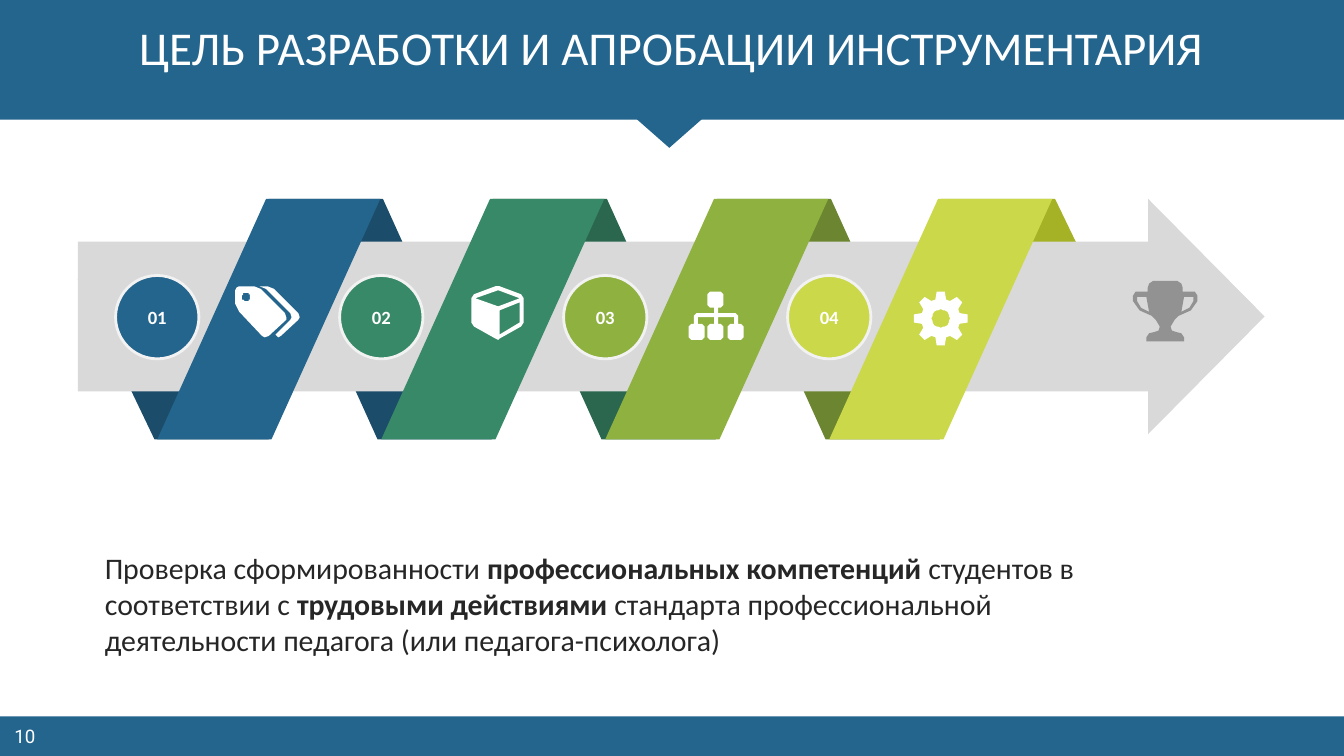
import dataclasses
import math

import pptx
import pptx.dml.color
import pptx.enum.shapes
import pptx.enum.text
import pptx.util

Inches = pptx.util.Inches
Kind = pptx.enum.shapes.MSO_SHAPE
Align = pptx.enum.text.PP_ALIGN
Anchor = pptx.enum.text.MSO_ANCHOR


@dataclasses.dataclass(frozen=True)
class Theme:
    """Holds the colours, fonts and type sizes."""
    blue: str = "24658D"
    white: str = "FFFFFF"
    ink: str = "262626"
    arrow: str = "D9D9D9"
    ring: str = "F2F2F2"
    prize: str = "929292"
    bands: tuple = ("24658D", "388968", "8FB140", "CAD849")
    folds: tuple = ("1B4C6A", "1B4C6A", "2A674E", "6B8530", "A5B226")
    font: str = "Calibri"
    digit: str = "Roboto"
    head: float = 25.2
    body: float = 16
    small: float = 10


theme = Theme()


def paint(shape, fill, line=None):
    """Gives a shape a flat fill and an optional outline."""
    shape.shadow.inherit = False
    shape.fill.solid()
    shape.fill.fore_color.rgb = pptx.dml.color.RGBColor.from_string(fill)
    if line:
        shape.line.color.rgb = pptx.dml.color.RGBColor.from_string(line)
        shape.line.width = pptx.util.Pt(1.5)
    else:
        shape.line.fill.background()
    return shape


def block(slide, kind, box, fill, line=None):
    """Adds a preset shape in a box given in inches."""
    return paint(slide.shapes.add_shape(kind, *map(Inches, box)), fill, line)


def trace(slide, left, top, loops, fill):
    """Draws closed loops, in hundredths of an inch from a corner."""
    pen = slide.shapes.build_freeform(*loops[0][0], scale=Inches(0.01))
    pen.add_line_segments(loops[0][1:], close=True)
    for loop in loops[1:]:
        pen.move_to(*loop[0])
        pen.add_line_segments(loop[1:], close=True)
    return paint(pen.convert_to_shape(Inches(left), Inches(top)), fill)


def write(shape, text, size=theme.body, color=theme.ink, font=theme.font,
          bold=False, align=Align.LEFT, anchor=Anchor.TOP):
    """Writes text, or a list of runs that alternate plain and bold."""
    frame = shape.text_frame
    frame.word_wrap = True
    frame.auto_size = pptx.enum.text.MSO_AUTO_SIZE.NONE
    frame.vertical_anchor = anchor
    frame.margin_left = frame.margin_right = 0
    frame.margin_top = frame.margin_bottom = 0
    para = frame.paragraphs[0]
    para.alignment = align
    for num, part in enumerate([text] if isinstance(text, str) else text):
        run = para.add_run()
        run.text = part
        run.font.name = font
        run.font.size = pptx.util.Pt(size)
        run.font.bold = bold or num % 2 == 1
        run.font.color.rgb = pptx.dml.color.RGBColor.from_string(color)


def circle(mid_x, mid_y, size, count=24):
    """Returns the points of a round loop."""
    turns = [2 * math.pi * num / count for num in range(count)]
    return [(mid_x + size * math.cos(turn), mid_y + size * math.sin(turn))
            for turn in turns]


def tags():
    """Returns the loops of the tag icon."""
    front = [(38, 25), (25, 37), (22, 38), (20, 37), (3, 19), (0, 13), (0, 3),
             (1, 1), (3, 0), (14, 0), (19, 2), (37, 20), (38, 23)]
    back = [(47, 25), (34, 37), (32, 38), (30, 36), (41, 25), (42, 23),
            (41, 20), (23, 2), (18, 0), (24, 0), (29, 2), (47, 20), (48, 23)]
    return [front, circle(8, 8, 3), back]


def cube():
    """Returns the loops of the cube icon."""
    rim = [(39, 27), (37, 30), (21, 39), (19.5, 40), (18, 39), (2, 30),
           (0, 27), (0, 9), (2, 6), (18, 0), (21, 0), (37, 6), (39, 9)]
    lid = [(36, 9), (19.5, 3), (3, 9), (19.5, 15)]
    side = [(36, 27), (36, 12), (21, 18), (21, 36)]
    return [rim, lid, side]


def tree():
    """Returns the loops of the hierarchy icon."""
    node = [(2, 0), (10, 0), (12, 2), (12, 10.5), (10, 12.5), (2, 12.5),
            (0, 10.5), (0, 2)]
    spots = [(14.5, 0), (0, 23.5), (14.5, 23.5), (29, 23.5)]
    stem = [(19, 12.5), (22, 12.5), (22, 16), (35, 16), (37, 18), (37, 23.5),
            (34, 23.5), (34, 19), (22, 19), (22, 23.5), (19, 23.5), (19, 19),
            (7, 19), (7, 23.5), (4, 23.5), (4, 18), (6, 16), (19, 16)]
    return [[(x + dx, y + dy) for x, y in node] for dx, dy in spots] + [stem]


def gear():
    """Returns the loops of the gear icon."""
    rim = []
    for tooth in range(8):
        for shift, size in ((-16, 14.6), (-9, 20), (9, 20), (16, 14.6)):
            turn = math.radians(45 * tooth + shift)
            rim.append((20 + size * math.cos(turn), 20 + size * math.sin(turn)))
    return [rim, circle(20, 20, 6.7)]


def trophy():
    """Returns the loops of the trophy icon."""
    half = [(33, 0), (36, 2), (37, 5), (37, 8), (46, 8), (48, 11), (48, 15),
            (43, 22), (34, 26), (31, 29), (28, 34), (29, 37), (32, 38),
            (36, 39), (38, 42), (38, 45)]
    hole = [(45, 12), (37.5, 12), (35.5, 23), (42, 20), (45, 15)]
    flip = [[(48 - x, y) for x, y in loop] for loop in (half, hole)]
    return [half + flip[0][::-1], hole, flip[1]]


def header(slide, left, top, width, height):
    """Places the top band, its notch and the title."""
    block(slide, Kind.RECTANGLE, (left, top, width, height), theme.blue)
    notch = block(slide, Kind.ISOSCELES_TRIANGLE,
                  (left + 4.73, top + height - 0.01, 0.5, 0.22), theme.blue)
    notch.rotation = 180
    title = slide.shapes.title
    title.left, title.top = Inches(left + 0.43), Inches(top + 0.14)
    title.width, title.height = Inches(width - 0.87), Inches(0.37)
    write(title, "ЦЕЛЬ РАЗРАБОТКИ И АПРОБАЦИИ ИНСТРУМЕНТАРИЯ",
          size=theme.head, color=theme.white, align=Align.CENTER)
    title.element.getparent().append(title.element)


def footer(slide, left, top, width, height):
    """Places the bottom band and the page number."""
    block(slide, Kind.RECTANGLE, (left, top, width, height), theme.blue)
    page = slide.shapes.add_textbox(
        *map(Inches, (left + 0.02, top + 0.06, 0.33, 0.17)))
    write(page, "10", size=theme.small, color=theme.white, font=theme.digit,
          align=Align.CENTER, anchor=Anchor.MIDDLE)


def ribbon(slide, left, top, width, height):
    """Places the arrow wrapped in four numbered bands."""
    step = 5 / 3
    start = left + 0.59
    band = [(0, 179), (81, 0), (166.5, 0), (85, 179)]
    fold = [(166.5, 179), (85, 0), (0, 0), (81, 179)]
    tail = [(0, 60), (57, 179), (142, 179), (94, 58)]
    tip = [(142, 118), (85, 0), (0, 0), (48, 120)]
    spots = [left] + [start + 0.83 + step * num for num in range(4)]
    for spot, loop, fill in zip(spots, (tail, fold, fold, fold, tip), theme.folds):
        trace(slide, spot, top, [loop], fill)
    arrow = block(slide, Kind.RIGHT_ARROW, (left, top, width, height), theme.arrow)
    arrow.adjustments[0], arrow.adjustments[1] = 0.637, 0.495
    icons = ((tags, 0.58, 0.65), (cube, 0.67, 0.65), (tree, 0.62, 0.69),
             (gear, 0.63, 0.69))
    for num, (fill, (icon, right, down)) in enumerate(zip(theme.bands, icons)):
        spot = start + step * num
        trace(slide, spot, top, [band], fill)
        trace(slide, spot + right, top + down, icon(), theme.white)
        badge = block(slide, Kind.OVAL, (spot - 0.31, top + 0.57, 0.62, 0.62),
                      fill, theme.ring)
        write(badge, f"{num + 1:02}", size=theme.small, color=theme.white,
              bold=True, align=Align.CENTER, anchor=Anchor.MIDDLE)
    trace(slide, left + 7.85, top + 0.61, trophy(), theme.prize)


def purpose(slide, left, top, width, height):
    """Places the statement of the goal."""
    box = slide.shapes.add_textbox(*map(Inches, (left, top, width, height)))
    write(box, ["Проверка сформированности ", "профессиональных компетенций ",
                "студентов в соответствии с ", "трудовыми действиями ",
                "стандарта профессиональной деятельности педагога "
                "(или педагога-психолога)"])


def main():
    """Builds and saves the slide."""
    deck = pptx.Presentation()
    deck.slide_width = Inches(10)
    deck.slide_height = deck.slide_width * 9 // 16
    slide = deck.slides.add_slide(deck.slide_layouts[5])
    footer(slide, 0, 5.33, 10, 0.3)
    header(slide, 0, 0, 10, 0.89)
    ribbon(slide, 0.58, 1.48, 8.83, 1.75)
    purpose(slide, 0.78, 4.09, 7.66, 0.81)
    deck.save("out.pptx")


if __name__ == "__main__":
    main()
